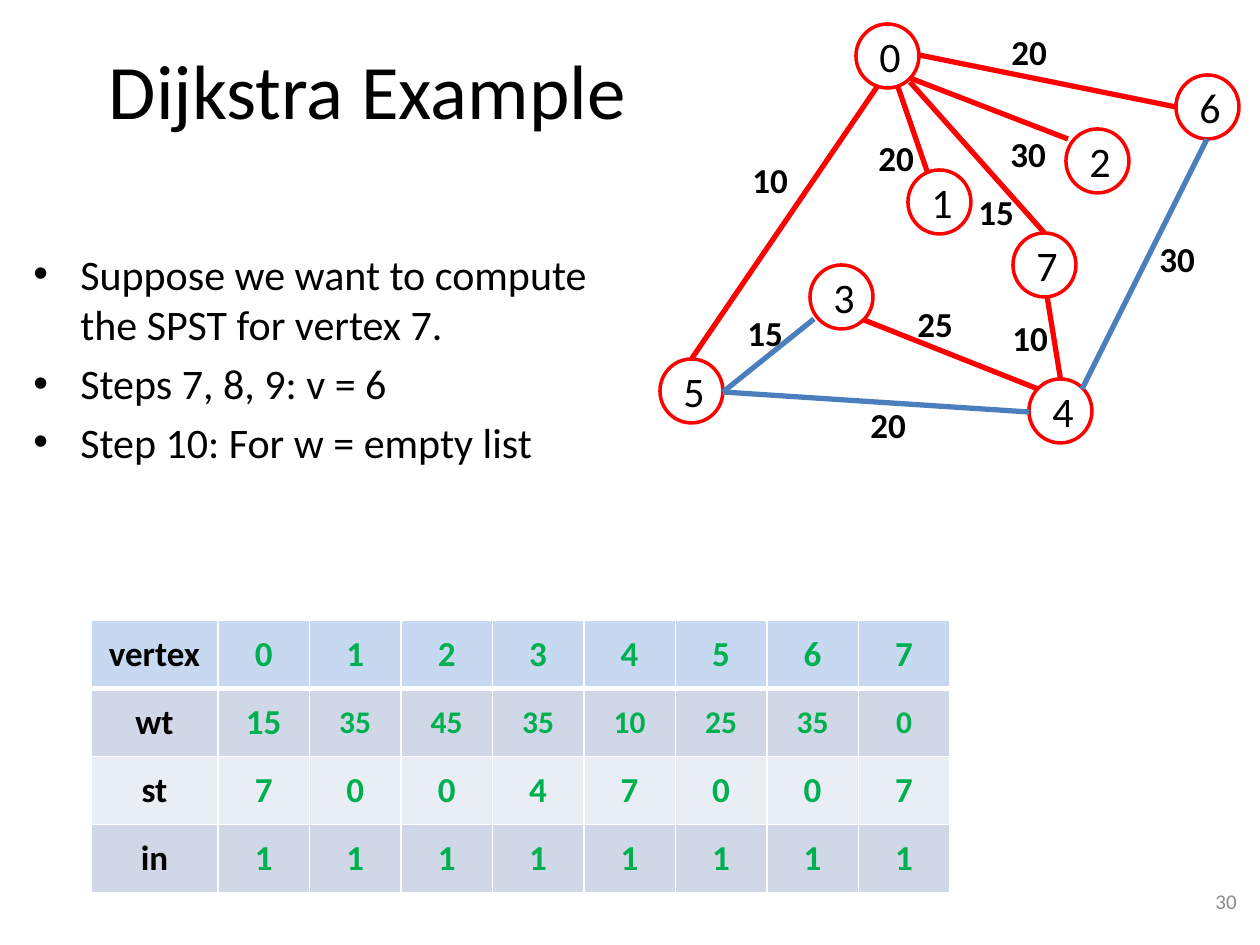
from lxml.etree import SubElement
from pptx import Presentation
from pptx.dml.color import RGBColor
from pptx.enum.shapes import MSO_CONNECTOR, MSO_SHAPE
from pptx.enum.text import MSO_ANCHOR, PP_ALIGN
from pptx.oxml.ns import qn
from pptx.util import Emu, Pt

BLACK, GRAY, WHITE = "000000", "8C8C8C", "FFFFFF"
RED, BLUE, GREEN = "FF0000", "4B7EBC", "00B050"
HEADER, BAND_DARK, BAND_LIGHT = "C6D9F1", "D0D8E8", "E9EDF4"
NODE_W, NODE_H = 63, 64

NODES = {"0": (856, 24), "1": (908, 170), "7": (1013, 233), "2": (1066, 129),
         "5": (660, 359), "3": (810, 265), "4": (1029, 379), "6": (1176, 75)}

# start x, start y, end x, end y, colour, vertex whose top the edge joins
EDGES = [
    (919, 55, 1176, 107, RED, None),
    (910, 78, 1068, 139, RED, None),
    (898, 87, 927, 171, RED, None),
    (877, 87, 692, 359, RED, "5"),
    (910, 82, 1042, 233, RED, "7"),
    (723, 392, 814, 319, BLUE, None),
    (723, 392, 1029, 412, BLUE, None),
    (864, 320, 1038, 389, RED, None),
    (1047, 296, 1061, 379, RED, "4"),
    (1207, 139, 1082, 389, BLUE, None),
]

WEIGHTS = [("10", 1000, 310), ("10", 740, 152), ("20", 999, 24),
           ("30", 998, 126), ("20", 866, 130), ("15", 966, 184),
           ("30", 1147, 231), ("20", 858, 397), ("15", 735, 305),
           ("25", 905, 296)]

STEPS = ["Suppose we want to compute\vthe SPST for vertex 7.",
         "Steps 7, 8, 9: v = 6",
         "Step 10: For w = empty list"]

TABLE = [["vertex", *"01234567"],
         ["wt", "15", "35", "45", "35", "10", "25", "35", "0"],
         ["st", *"70047007"],
         ["in", *"11111111"]]


def px(n):
    return Emu(round(n * 914400 / 126))


def rgb(color):
    return RGBColor.from_string(color)


def write(tf, text, size=24, color=BLACK, bold=False, align=PP_ALIGN.LEFT,
          anchor=MSO_ANCHOR.TOP, wrap=True, bullet=False):
    """Fill a text frame with one paragraph per line of text."""
    tf.word_wrap = wrap
    tf.vertical_anchor = anchor
    for i, line in enumerate(text.split("\n")):
        p = tf.paragraphs[0] if i == 0 else tf.add_paragraph()
        p.text = line
        p.alignment = align
        for r in p.runs:
            r.font.name = "Calibri"
            r.font.size = Pt(size)
            r.font.bold = bold
            r.font.color.rgb = rgb(color)
        if bullet:
            p.space_before = Pt(size * 0.2)
            add_bullet(p)


def add_bullet(p):
    pPr = p._p.get_or_add_pPr()
    indent = px(47)
    pPr.set("marL", str(indent))
    pPr.set("indent", str(-indent))
    SubElement(pPr, qn("a:buFont"), typeface="Arial")
    SubElement(pPr, qn("a:buChar"), char="•")


def set_borders(cell, **widths):
    """Draw white cell borders; widths in points, keyed L, R, T and B."""
    tcPr = cell._tc.get_or_add_tcPr()
    for i, (side, width) in enumerate(widths.items()):
        ln = SubElement(tcPr, qn(f"a:ln{side}"), w=str(Pt(width)))
        fill = SubElement(ln, qn("a:solidFill"))
        SubElement(fill, qn("a:srgbClr"), val=WHITE)
        tcPr.insert(i, ln)


class Deck:
    """Holds the presentation, its current slide and the line style."""

    node_line = Pt(2)
    edge_line = Pt(3)

    def __init__(self, width, height):
        self.prs = Presentation()
        self.prs.slide_width, self.prs.slide_height = px(width), px(height)
        self.s = self.prs.slides.add_slide(self.prs.slide_layouts[6])

    def text(self, x, y, w, h, text, **fmt):
        sp = self.s.shapes.add_textbox(px(x), px(y), px(w), px(h))
        write(sp.text_frame, text, **fmt)

    def node(self, x, y, name):
        sp = self.s.shapes.add_shape(MSO_SHAPE.OVAL, px(x), px(y),
                                     px(NODE_W), px(NODE_H))
        sp.shadow.inherit = False
        sp.fill.background()
        sp.line.color.rgb = rgb(RED)
        sp.line.width = self.node_line
        self.text(x + 5, y, 58, NODE_H, name, align=PP_ALIGN.CENTER)
        return sp

    def edge(self, x1, y1, x2, y2, color, target=None):
        cx = self.s.shapes.add_connector(MSO_CONNECTOR.STRAIGHT, px(x1),
                                         px(y1), px(x2), px(y2))
        cx.line.color.rgb = rgb(color)
        cx.line.width = self.edge_line
        SubElement(cx._element.spPr, qn("a:effectLst"))
        if target is not None:
            cx.end_connect(target, 0)

    def table(self, x, y, w, h, first_col, rows):
        n_rows, n_cols = len(rows), len(rows[0])
        tbl = self.s.shapes.add_table(n_rows, n_cols, px(x), px(y),
                                      px(w), px(h)).table
        for c, col in enumerate(tbl.columns):
            col.width = px((w - first_col) / (n_cols - 1) if c else first_col)
        for r, values in enumerate(rows):
            tbl.rows[r].height = px(h / n_rows)
            band = BAND_DARK if r % 2 else BAND_LIGHT
            for c, value in enumerate(values):
                cell = tbl.cell(r, c)
                cell.fill.solid()
                cell.fill.fore_color.rgb = rgb(band if r else HEADER)
                write(cell.text_frame, value, bold=True,
                      size=18 if r == 1 and c > 1 else 20,
                      color=GREEN if c else BLACK, align=PP_ALIGN.CENTER)
                cell.vertical_anchor = MSO_ANCHOR.MIDDLE
                set_borders(cell, L=1, R=1, T=3 if r == 1 else 1,
                            B=1 if r else 3)


def main():
    deck = Deck(1260, 945)
    deck.text(63, 10, 609, 157, "Dijkstra Example", size=44,
              align=PP_ALIGN.CENTER, anchor=MSO_ANCHOR.MIDDLE)
    deck.text(21, 242, 745, 459, "\n".join(STEPS), bullet=True)
    deck.text(955, 876, 294, 50, "30", size=12, color=GRAY,
              align=PP_ALIGN.RIGHT, anchor=MSO_ANCHOR.MIDDLE)
    nodes = {name: deck.node(x, y, name) for name, (x, y) in NODES.items()}
    for *line, target in EDGES:
        deck.edge(*line, nodes.get(target))
    for weight, x, y in WEIGHTS:
        deck.text(x, y, 62, 55, weight, size=20, bold=True, wrap=False)
    deck.table(91, 620, 859, 273, 127, TABLE)
    deck.prs.save("out.pptx")


if __name__ == "__main__":
    main()
